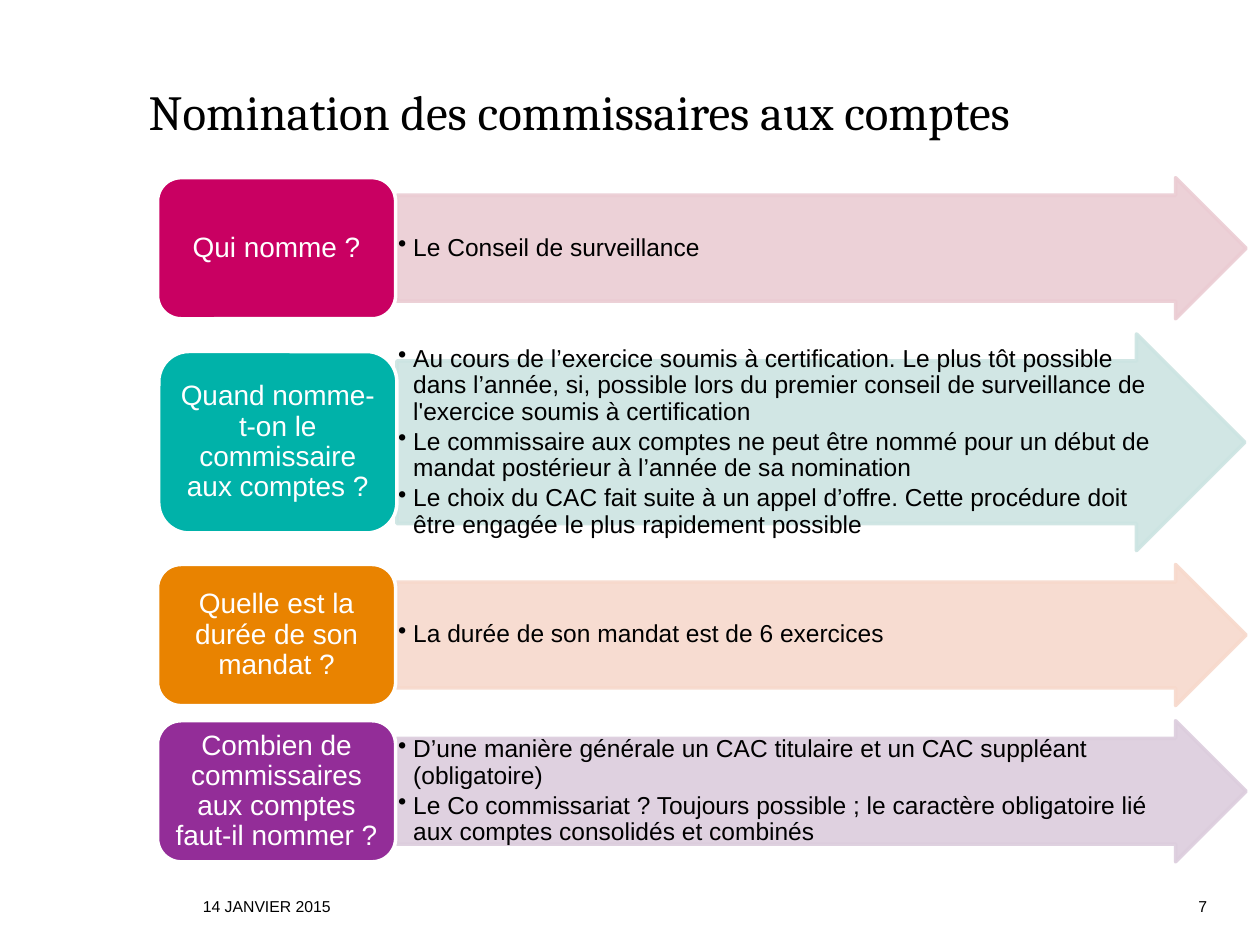
from dataclasses import dataclass

from lxml import etree
from pptx import Presentation
from pptx.dml.color import RGBColor
from pptx.enum.shapes import MSO_SHAPE
from pptx.enum.text import MSO_ANCHOR, PP_ALIGN
from pptx.oxml.ns import qn
from pptx.util import Inches, Pt

ARROW = MSO_SHAPE.RIGHT_ARROW
ROUNDED = MSO_SHAPE.ROUNDED_RECTANGLE
MIDDLE, BOTTOM = MSO_ANCHOR.MIDDLE, MSO_ANCHOR.BOTTOM
LEFT, CENTER, RIGHT = PP_ALIGN.LEFT, PP_ALIGN.CENTER, PP_ALIGN.RIGHT


@dataclass(frozen=True)
class Theme:
    title_font: str = "Cambria"
    body_font: str = "Arial"
    black: str = "000000"
    white: str = "FFFFFF"
    title_size: int = 28
    question_size: int = 16
    answer_size: int = 14
    footer_size: int = 9
    outline: int = 2
    arrow_opacity: int = 90


THEME = Theme()

# Question, its colour, arrow colour, box (left, top, height),
# arrow (top, width, height), answers
ROWS = [
    ("Qui nomme ?", "C90062", "EBCCD3", (1.25, 1.41, 1.12), (1.41, 6.74, 1.12),
     ["Le Conseil de surveillance"]),
    ("Quand nomme-t-on le commissaire aux comptes ?", "00B2A9", "CCE4E2",
     (1.26, 2.79, 1.44), (2.65, 6.73, 1.72),
     ["Au cours de l’exercice soumis à certification. Le plus tôt possible dans "
      "l’année, si, possible lors du premier conseil de surveillance de "
      "l'exercice soumis à certification",
      "Le commissaire aux comptes ne peut être nommé pour un début de mandat "
      "postérieur à l’année de sa nomination",
      "Le choix du CAC fait suite à un appel d’offre. Cette procédure doit être "
      "engagée le plus rapidement possible"]),
    ("Quelle est la durée de son mandat ?", "E98300", "F7D9CC",
     (1.25, 4.48, 1.12), (4.48, 6.74, 1.12),
     ["La durée de son mandat est de 6 exercices"]),
    ("Combien de commissaires aux comptes faut-il nommer ?", "932D98", "DCCDDD",
     (1.25, 5.72, 1.12), (5.72, 6.74, 1.12),
     ["D’une manière générale un CAC titulaire et un CAC suppléant (obligatoire)",
      "Le Co commissariat ? Toujours possible ; le caractère obligatoire lié aux "
      "comptes consolidés et combinés"]),
]
ARROW_LEFT = 3.15
QUESTION_WIDTH = 1.89
BULLET_INDENT = 0.12


def set_frame(frame, anchor, side=0, end=0):
    """Set wrapping, anchor and the margins at the sides and at top and bottom."""
    frame.word_wrap = True
    frame.vertical_anchor = anchor
    frame.margin_left = frame.margin_right = Inches(side)
    frame.margin_top = frame.margin_bottom = Inches(end)


def set_para(para, text, size, color, align, font=THEME.body_font):
    para.text = text
    para.alignment = align
    para.font.name = font
    para.font.size = Pt(size)
    para.font.color.rgb = RGBColor.from_string(color)


def add_bullet(para):
    properties = para._p.get_or_add_pPr()
    properties.set("marL", str(Inches(BULLET_INDENT)))
    properties.set("indent", str(-Inches(BULLET_INDENT)))
    etree.SubElement(properties, qn("a:buChar"), char="•")


def set_opacity(shape, percent):
    """Make the fill and the outline of a shape partly transparent."""
    for color in shape._element.spPr.iter(qn("a:srgbClr")):
        etree.SubElement(color, qn("a:alpha"), val=str(percent * 1000))


def add_text(page, text, place, size, align=LEFT, font=THEME.body_font):
    box = page.shapes.add_textbox(*map(Inches, place))
    set_frame(box.text_frame, BOTTOM)
    set_para(box.text_frame.paragraphs[0], text, size, THEME.black, align, font)


def add_filled_shape(page, preset, place, fill, line):
    shape = page.shapes.add_shape(preset, *map(Inches, place))
    shape.shadow.inherit = False
    shape.fill.solid()
    shape.fill.fore_color.rgb = RGBColor.from_string(fill)
    shape.line.color.rgb = RGBColor.from_string(line)
    shape.line.width = Pt(THEME.outline)
    return shape


def add_answer_arrow(page, place, color, answers):
    arrow = add_filled_shape(page, ARROW, place, color, color)
    arrow.adjustments[0] = 0.75
    arrow.adjustments[1] = 0.5
    set_opacity(arrow, THEME.arrow_opacity)
    frame = arrow.text_frame
    set_frame(frame, MIDDLE, 0.01, 0.01)
    for index, answer in enumerate(answers):
        para = frame.add_paragraph() if index else frame.paragraphs[0]
        add_bullet(para)
        set_para(para, answer, THEME.answer_size, THEME.black, LEFT)
        para.line_spacing = 0.9
        para.space_after = Pt(2.1)


def add_question(page, place, color, question):
    box = add_filled_shape(page, ROUNDED, place, color, THEME.white)
    set_frame(box.text_frame, MIDDLE, 0.07, 0.03)
    para = box.text_frame.paragraphs[0]
    set_para(para, question, THEME.question_size, THEME.white, CENTER)
    para.line_spacing = 0.9


def main():
    deck = Presentation()
    deck.slide_width, deck.slide_height = Inches(10), Inches(7.5)
    page = deck.slides.add_slide(deck.slide_layouts[6])

    add_text(page, "Nomination des commissaires aux comptes", (1.18, 0, 8.25, 1.11),
             THEME.title_size, font=THEME.title_font)
    for question, color, tint, box, arrow, answers in ROWS:
        arrow_top, arrow_width, arrow_height = arrow
        add_answer_arrow(page, (ARROW_LEFT, arrow_top, arrow_width, arrow_height),
                         tint, answers)
        left, top, height = box
        add_question(page, (left, top, QUESTION_WIDTH, height), color, question)
    add_text(page, "14 JANVIER 2015", (1.61, 7.07, 7.09, 0.2), THEME.footer_size)
    add_text(page, "7", (8.78, 7.07, 0.8, 0.2), THEME.footer_size, RIGHT)

    deck.save("out.pptx")


if __name__ == "__main__":
    main()
